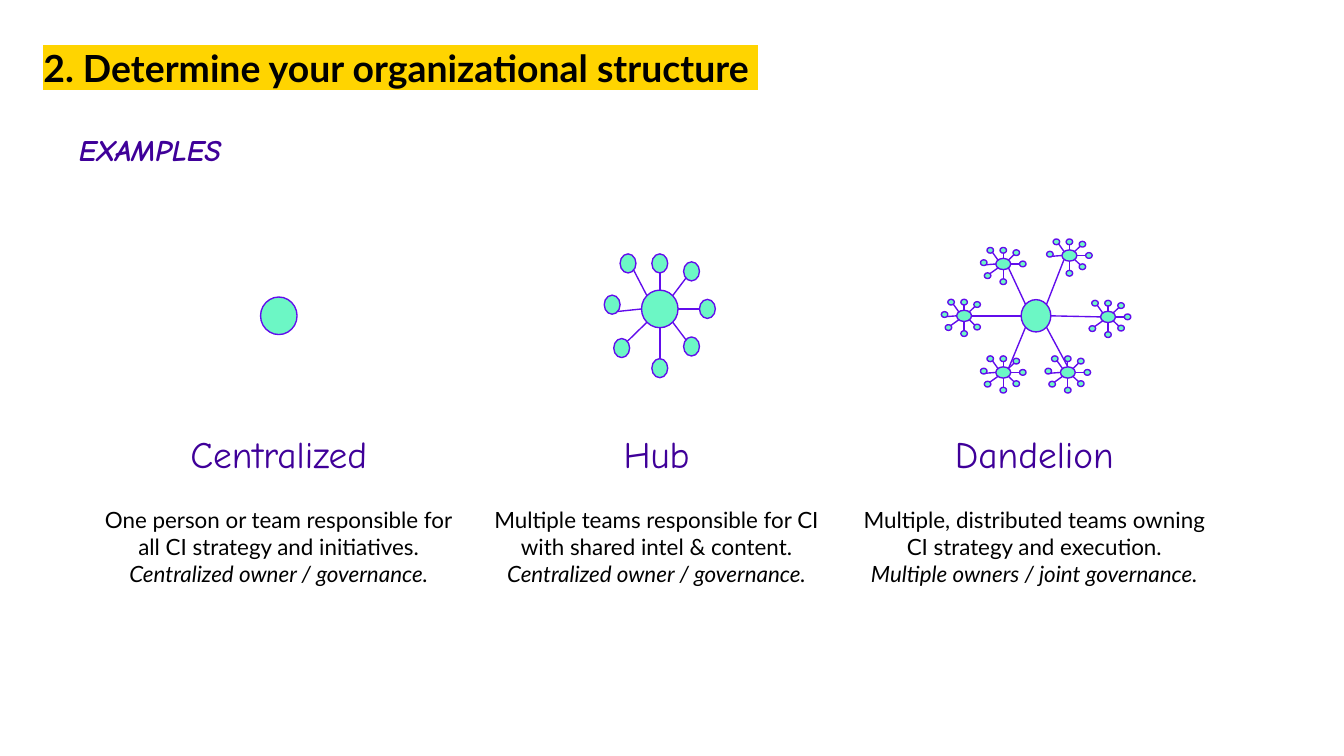
from lxml import etree
from pptx import Presentation
from pptx.dml.color import RGBColor
from pptx.enum.shapes import MSO_CONNECTOR, MSO_SHAPE
from pptx.enum.text import MSO_ANCHOR, MSO_AUTO_SIZE, PP_ALIGN
from pptx.oxml.ns import qn
from pptx.util import Cm, Pt

STRAIGHT = MSO_CONNECTOR.STRAIGHT
OVAL = MSO_SHAPE.OVAL
TOP = MSO_ANCHOR.TOP
FIXED_SIZE = MSO_AUTO_SIZE.NONE
LEFT, CENTER = PP_ALIGN.LEFT, PP_ALIGN.CENTER

MINT = RGBColor(0x6C, 0xF7, 0xC5)
VIOLET = RGBColor(0x62, 0x0D, 0xEC)
PURPLE = RGBColor(0x3F, 0x00, 0x99)
BLACK = RGBColor(0x00, 0x00, 0x00)
YELLOW = RGBColor(0xFF, 0xD4, 0x00)

HAND_FONT, TEXT_FONT = "Comic Neue", "Lato"
PLAIN_TABLE = "{2D5ABB26-0587-4C30-8999-92F81FD0307C}"

DIAGONAL = 0.71
RIM = {
    "N": (0, -1), "NE": (DIAGONAL, -DIAGONAL), "E": (1, 0), "SE": (DIAGONAL, DIAGONAL),
    "S": (0, 1), "SW": (-DIAGONAL, DIAGONAL), "W": (-1, 0), "NW": (-DIAGONAL, -DIAGONAL),
}
CORE_SIZE = (0.69, 0.71)
LEAF_SIZE = (0.3, 0.36)
LEAVES = {
    "NW": (-0.6, -0.86, "SE"), "N": (0, -0.86, "S"), "NE": (0.6, -0.71, "SW"),
    "E": (0.9, 0, "W"), "SE": (0.6, 0.71, "NW"), "S": (0, 1.12, "N"),
    "SW": (-0.72, 0.74, "NE"), "W": (-0.9, -0.08, "SE"),
}

CENTRALIZED_CENTER = (5.27, 5.97)
HUB_CENTER = (12.47, 5.84)
DANDELION_CENTER = (19.58, 5.97)
DANDELION_SIZE = (0.56, 0.61)
SEED_SCALE = (0.41, 0.3)
SEEDS = [
    ((18.96, 4.99), "SE", "SE", "NW"),
    ((18.96, 7.04), None, "NE", "SW"),
    ((18.22, 5.97), "E", "E", "W"),
    ((20.94, 5.99), "W", "W", "E"),
    ((20.21, 4.83), "SW", "SW", "NE"),
    ((20.18, 7.04), None, "N", "SE"),
]
STRUCTURES = [
    ("Centralized", ["One person or team responsible for",
                     "all CI strategy and initiatives."],
     "Centralized owner / governance."),
    ("Hub", ["Multiple teams responsible for CI with shared intel & content."],
     "Centralized owner / governance."),
    ("Dandelion", ["Multiple, distributed teams owning CI strategy and execution."],
     "Multiple owners / joint governance."),
]


def scaled(size, scale):
    """Return a width and height multiplied by a scale pair."""
    return size[0] * scale[0], size[1] * scale[1]


def rim(center, size, direction):
    """Return the point where an ellipse's edge meets a compass direction."""
    dx, dy = RIM[direction]
    return center[0] + dx * size[0] / 2, center[1] + dy * size[1] / 2


class Deck:
    """Holds the style and the current slide, with lengths given in centimetres."""

    def __init__(self):
        """Open a 16:9 deck with one title-only slide."""
        self.presentation = Presentation()
        self.presentation.slide_width = Cm(25.4)
        self.presentation.slide_height = Cm(14.29)
        self.slide = self.presentation.slides.add_slide(self.presentation.slide_layouts[5])

    def add_words(self, paragraph, text, font, size, color, align=LEFT, bold=False, italic=False):
        """Fill a paragraph with one run and style it."""
        run = paragraph.add_run()
        run.text = text
        paragraph.alignment = align
        style = paragraph.font
        style.name, style.size = font, Pt(size)
        style.bold, style.italic = bold, italic
        style.color.rgb = color
        return run

    def title(self, text):
        """Place the highlighted slide title."""
        heading = self.slide.shapes.title
        heading.left, heading.top = Cm(0.64), Cm(0.84)
        heading.width, heading.height = Cm(16.18), Cm(1.6)
        frame = heading.text_frame
        frame.auto_size, frame.vertical_anchor = FIXED_SIZE, TOP
        frame.margin_left = frame.margin_right = Cm(0.18)
        frame.margin_top = frame.margin_bottom = Cm(0.1)
        paragraph = frame.paragraphs[0]
        paragraph.line_spacing = 0.9
        run = self.add_words(paragraph, text, TEXT_FONT, 20, BLACK, bold=True)
        highlight = etree.SubElement(run._r.get_or_add_rPr(), qn("a:highlight"))
        etree.SubElement(highlight, qn("a:srgbClr"), val=str(YELLOW))

    def label(self, text, left, top, width, height):
        """Add a handwritten section label."""
        frame = self.slide.shapes.add_textbox(Cm(left), Cm(top), Cm(width), Cm(height)).text_frame
        frame.word_wrap = True
        frame.margin_left = frame.margin_right = Cm(0.25)
        frame.margin_top = frame.margin_bottom = Cm(0.25)
        self.add_words(frame.paragraphs[0], text, HAND_FONT, 16, PURPLE, bold=True, italic=True)

    def group(self):
        """Add an empty group for one diagram."""
        return self.slide.shapes.add_group_shape().shapes

    def node(self, shapes, center, size):
        """Add an ellipse around a center."""
        width, height = size
        ellipse = shapes.add_shape(OVAL, Cm(center[0] - width / 2), Cm(center[1] - height / 2),
                                   Cm(width), Cm(height))
        ellipse.shadow.inherit = False
        ellipse.fill.solid()
        ellipse.fill.fore_color.rgb = MINT
        ellipse.line.color.rgb = VIOLET
        ellipse.line.width = Pt(0.75)

    def link(self, shapes, start, end):
        """Add a straight line between two points."""
        line = shapes.add_connector(STRAIGHT, Cm(start[0]), Cm(start[1]), Cm(end[0]), Cm(end[1]))
        line.line.color.rgb = VIOLET
        line.line.width = Pt(0.75)
        etree.SubElement(line._element.spPr, qn("a:effectLst"))

    def cluster(self, shapes, center, scale=(1, 1), skipped=None):
        """Add a core node with its ring of linked leaves."""
        core_size, leaf_size = scaled(CORE_SIZE, scale), scaled(LEAF_SIZE, scale)
        self.node(shapes, center, core_size)
        for direction, (dx, dy, leaf_side) in LEAVES.items():
            if direction == skipped:
                continue
            leaf = (center[0] + dx * scale[0], center[1] + dy * scale[1])
            self.node(shapes, leaf, leaf_size)
            self.link(shapes, rim(leaf, leaf_size, leaf_side), rim(center, core_size, direction))

    def dandelion(self, shapes):
        """Add a middle node joined to small clusters around it."""
        self.node(shapes, DANDELION_CENTER, DANDELION_SIZE)
        seed_size = scaled(CORE_SIZE, SEED_SCALE)
        for center, skipped, seed_side, middle_side in SEEDS:
            self.cluster(shapes, center, SEED_SCALE, skipped)
            self.link(shapes, rim(center, seed_size, seed_side),
                      rim(DANDELION_CENTER, DANDELION_SIZE, middle_side))

    def table(self, structures, left, top, column_width, row_heights):
        """Add the borderless table of names and descriptions."""
        grid = self.slide.shapes.add_table(
            2, len(structures), Cm(left), Cm(top),
            Cm(column_width * len(structures)), Cm(sum(row_heights))).table
        grid._tbl.tblPr.find(qn("a:tableStyleId")).text = PLAIN_TABLE
        grid.first_row = grid.horz_banding = False
        for row, height in zip(grid.rows, row_heights):
            row.height = Cm(height)
        for cell in grid.iter_cells():
            cell.fill.background()
            cell.margin_left = cell.margin_right = Cm(0.25)
            cell.margin_top = cell.margin_bottom = Cm(0.25)
        for column, (name, description, governance) in enumerate(structures):
            grid.columns[column].width = Cm(column_width)
            self.add_words(grid.cell(0, column).text_frame.paragraphs[0], name,
                           HAND_FONT, 20, PURPLE, CENTER)
            frame = grid.cell(1, column).text_frame
            for index, text in enumerate([*description, governance]):
                paragraph = frame.add_paragraph() if index else frame.paragraphs[0]
                self.add_words(paragraph, text, TEXT_FONT, 12, BLACK, CENTER,
                               italic=text == governance)


def main():
    """Build the organizational structure slide."""
    deck = Deck()
    deck.title("2. Determine your organizational structure ")
    deck.label("EXAMPLES", 1.24, 2.24, 3.3, 1.19)
    deck.node(deck.slide.shapes, CENTRALIZED_CENTER, CORE_SIZE)
    deck.cluster(deck.group(), HUB_CENTER)
    deck.dandelion(deck.group())
    deck.table(STRUCTURES, 1.7, 7.98, 7.14, (1.22, 2.54))
    deck.presentation.save("out.pptx")


if __name__ == "__main__":
    main()
